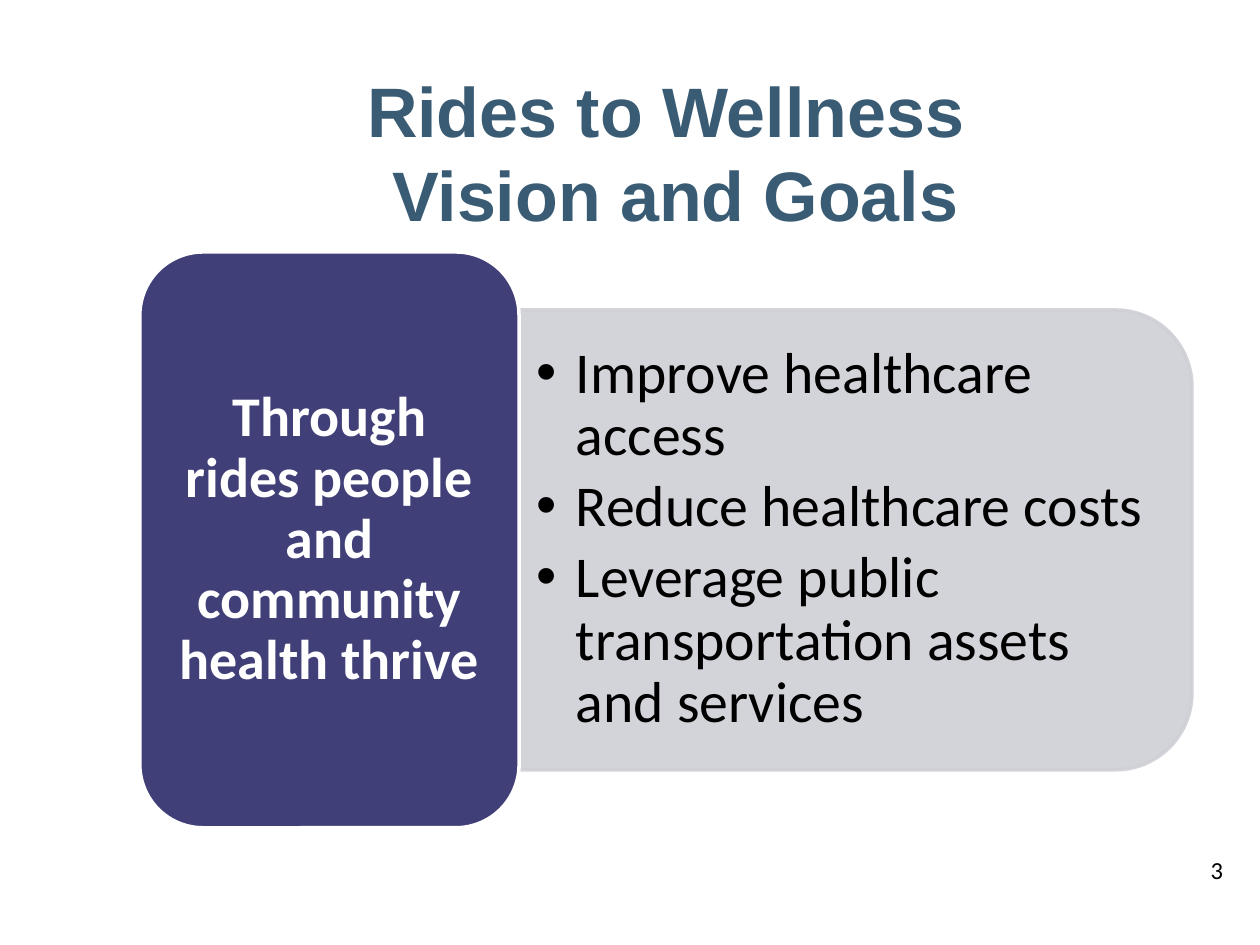
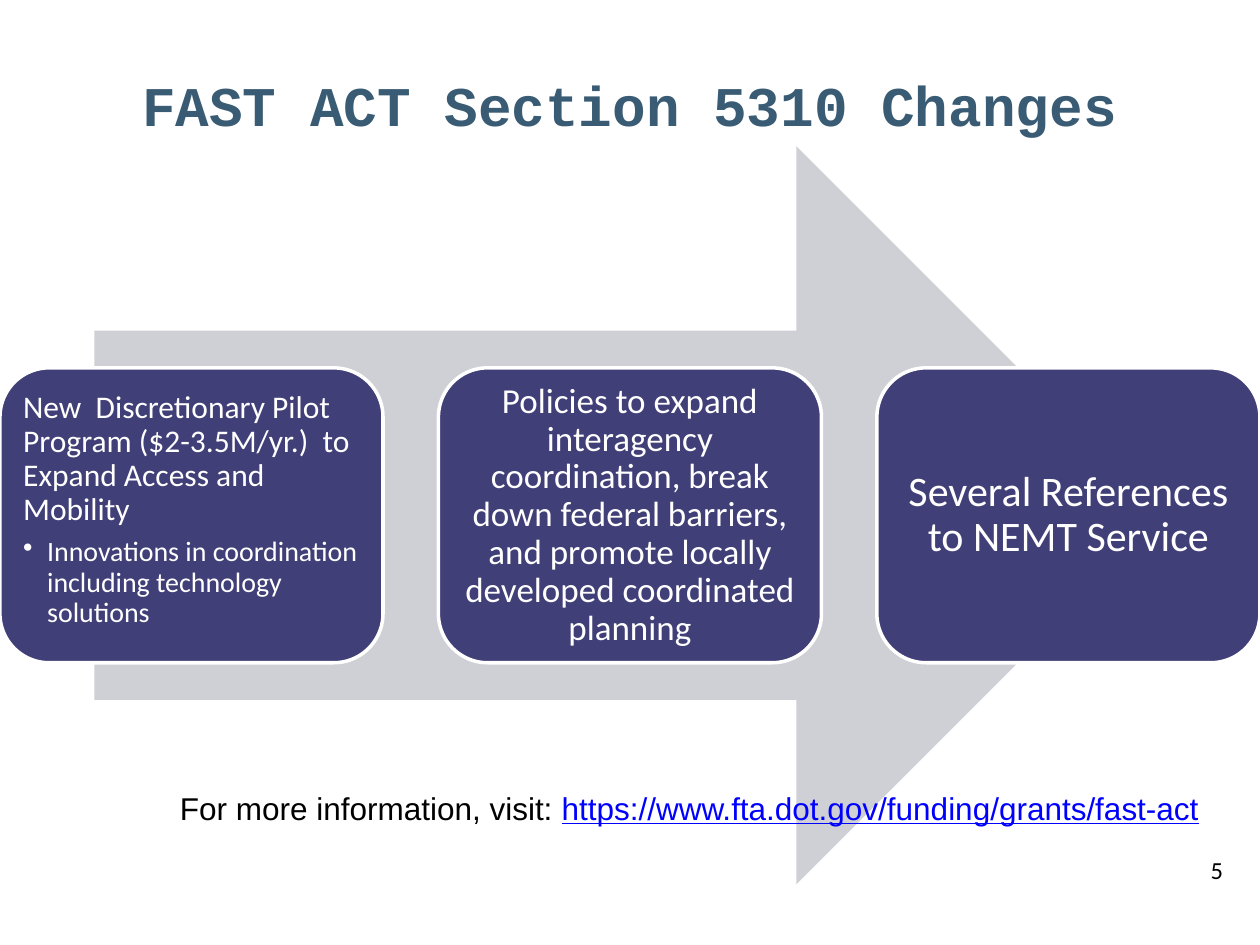
import lxml.etree
import pptx
import pptx.dml.color
import pptx.enum.shapes
import pptx.enum.text
import pptx.oxml.ns
import pptx.util

SLIDE_WIDTH = pptx.util.Inches(10)
SLIDE_HEIGHT = pptx.util.Inches(7.5)
COLUMN = SLIDE_WIDTH / 100
ROW = SLIDE_HEIGHT / 75

TITLE_BLUE = pptx.dml.color.RGBColor(0x39, 0x5B, 0x74)
INDIGO = pptx.dml.color.RGBColor(0x41, 0x3F, 0x77)
PALE_GREY = pptx.dml.color.RGBColor(0xCF, 0xCF, 0xD6)
LINK_BLUE = pptx.dml.color.RGBColor(0x00, 0x00, 0xFF)
WHITE = pptx.dml.color.RGBColor(0xFF, 0xFF, 0xFF)
BLACK = pptx.dml.color.RGBColor(0x00, 0x00, 0x00)

PRESET = pptx.enum.shapes.MSO_SHAPE
ALIGN = pptx.enum.text.PP_ALIGN
ANCHOR = pptx.enum.text.MSO_ANCHOR

TITLE_AND_CONTENT = 1
TITLE_ONLY = 5


def place(column, row, columns, rows):
    return (
        round(column * COLUMN),
        round(row * ROW),
        round(columns * COLUMN),
        round(rows * ROW),
    )


def move(shape, area):
    shape.left, shape.top, shape.width, shape.height = place(*area)


def set_frame(shape, anchor, side=1, edge=0.5):
    frame = shape.text_frame
    frame.word_wrap = True
    frame.auto_size = pptx.enum.text.MSO_AUTO_SIZE.NONE
    frame.vertical_anchor = anchor
    frame.margin_left = frame.margin_right = round(side * COLUMN)
    frame.margin_top = frame.margin_bottom = round(edge * ROW)
    return frame


def next_paragraph(frame):
    first = frame.paragraphs[0]
    return frame.add_paragraph() if first.runs else first


def add_run(paragraph, text, font, size, color, bold=False, underline=False):
    run = paragraph.add_run()
    run.text = text
    run.font.name = font
    run.font.size = pptx.util.Pt(size)
    run.font.color.rgb = color
    run.font.bold = bold
    run.font.underline = underline


def set_spacing(paragraph, size, after_share):
    paragraph.line_spacing = 0.9
    paragraph.space_before = pptx.util.Pt(0)
    paragraph.space_after = pptx.util.Pt(round(size * after_share))


def add_statement(frame, text, size, align=ALIGN.CENTER, bold=False):
    paragraph = next_paragraph(frame)
    paragraph.alignment = align
    set_spacing(paragraph, size, 0.35)
    add_run(paragraph, text, "Calibri", size, WHITE, bold)


def add_bullet(frame, text, size, color, indent):
    paragraph = next_paragraph(frame)
    properties = paragraph._p.get_or_add_pPr()
    hanging = round(indent * COLUMN)
    properties.set("marL", str(hanging))
    properties.set("indent", str(-hanging))
    bullet = lxml.etree.SubElement(properties, pptx.oxml.ns.qn("a:buChar"))
    bullet.set("char", "•")
    paragraph.alignment = ALIGN.LEFT
    set_spacing(paragraph, size, 0.15)
    add_run(paragraph, text, "Calibri", size, color)


def add_title(slide, lines, font, size, area):
    title = slide.shapes.title
    move(title, area)
    paragraph = set_frame(title, ANCHOR.MIDDLE).paragraphs[0]
    paragraph.alignment = ALIGN.CENTER
    for index, line in enumerate(lines):
        if index:
            paragraph.add_line_break()
        add_run(paragraph, line, font, size, TITLE_BLUE, bold=True)


def add_text_box(slide, area):
    box = slide.shapes.add_textbox(*place(*area))
    return set_frame(box, ANCHOR.TOP).paragraphs[0]


def add_page_number(slide, number):
    paragraph = add_text_box(slide, (95.1, 67.4, 4.9, 7))
    add_run(paragraph, str(number), "Calibri", 14, BLACK)


def add_filled_shape(slide, preset, area, fill, line=None):
    shape = slide.shapes.add_shape(preset, *place(*area))
    shape.shadow.inherit = False
    shape.fill.solid()
    shape.fill.fore_color.rgb = fill
    if line is None:
        shape.line.fill.background()
    else:
        shape.line.color.rgb = line
        shape.line.width = pptx.util.Pt(2)
    return shape


def add_card(slide, area, anchor, side, edge):
    card = add_filled_shape(slide, PRESET.ROUNDED_RECTANGLE, area, INDIGO, WHITE)
    return set_frame(card, anchor, side, edge)


def set_opacity(shape, percent):
    for color in shape._element.spPr.iter(pptx.oxml.ns.qn("a:srgbClr")):
        alpha = lxml.etree.SubElement(color, pptx.oxml.ns.qn("a:alpha"))
        alpha.set("val", str(percent * 1000))


def add_goals_panel(slide):
    panel = add_filled_shape(
        slide, PRESET.ROUND_2_SAME_RECTANGLE, (49.6, 16.1, 36.5, 53.5), PALE_GREY, PALE_GREY
    )
    panel.rotation = 90
    set_opacity(panel, 90)


def add_goals(slide, goals):
    body = slide.placeholders[1]
    move(body, (41.2, 26.3, 51.7, 33))
    frame = set_frame(body, ANCHOR.MIDDLE, 1.4, 0.7)
    for goal in goals:
        add_bullet(frame, goal, 33, BLACK, 3.1)
    body._element.getparent().append(body._element)


def build_vision_slide(presentation):
    slide = presentation.slides.add_slide(presentation.slide_layouts[TITLE_AND_CONTENT])
    add_title(slide, ["Rides to Wellness ", "Vision and Goals"], "Arial", 40, (8.6, 6.7, 90, 10.7))
    add_goals_panel(slide)
    add_goals(slide, [
        "Improve healthcare access",
        "Reduce healthcare costs",
        "Leverage public transportation assets and services",
    ])
    vision = add_card(slide, (11.1, 20, 30.1, 45.7), ANCHOR.MIDDLE, 1.3, 0.7)
    add_statement(vision, "Through rides people and community health thrive", 32, bold=True)
    add_page_number(slide, 3)


def add_change_card(slide, index, anchor, margin):
    width = 30.4
    step = (100 - width) / 2
    return add_card(slide, (index * step, 29.2, width, 23.4), anchor, margin, margin)


def build_changes_slide(presentation):
    slide = presentation.slides.add_slide(presentation.slide_layouts[TITLE_ONLY])
    add_title(slide, ["FAST ACT Section 5310 Changes"], "Courier New", 32, (5, 2.9, 90, 10.7))
    add_filled_shape(slide, PRESET.RIGHT_ARROW, (7.5, 11.6, 85, 58.6), PALE_GREY)

    pilot = add_change_card(slide, 0, ANCHOR.TOP, 0.7)
    add_statement(
        pilot,
        "New  Discretionary Pilot Program ($2-3.5M/yr.)  to Expand Access and Mobility",
        18,
        ALIGN.LEFT,
    )
    add_bullet(pilot, "Innovations in coordination including technology solutions", 16, WHITE, 1.9)

    policies = add_change_card(slide, 1, ANCHOR.MIDDLE, 0.8)
    add_statement(
        policies,
        "Policies to expand interagency coordination, break down federal barriers, "
        "and promote locally developed coordinated planning",
        20,
    )

    references = add_change_card(slide, 2, ANCHOR.MIDDLE, 1)
    add_statement(references, "Several References to NEMT Service", 24)

    more = add_text_box(slide, (13.3, 62.1, 85.2, 4))
    add_run(more, "For more information, visit: ", "Arial", 18, BLACK)
    add_run(
        more, "https://www.fta.dot.gov/funding/grants/fast-act", "Arial", 18, LINK_BLUE, underline=True
    )
    add_page_number(slide, 5)


def main():
    presentation = pptx.Presentation()
    presentation.slide_width = SLIDE_WIDTH
    presentation.slide_height = SLIDE_HEIGHT
    build_vision_slide(presentation)
    build_changes_slide(presentation)
    presentation.save("out.pptx")


if __name__ == "__main__":
    main()
